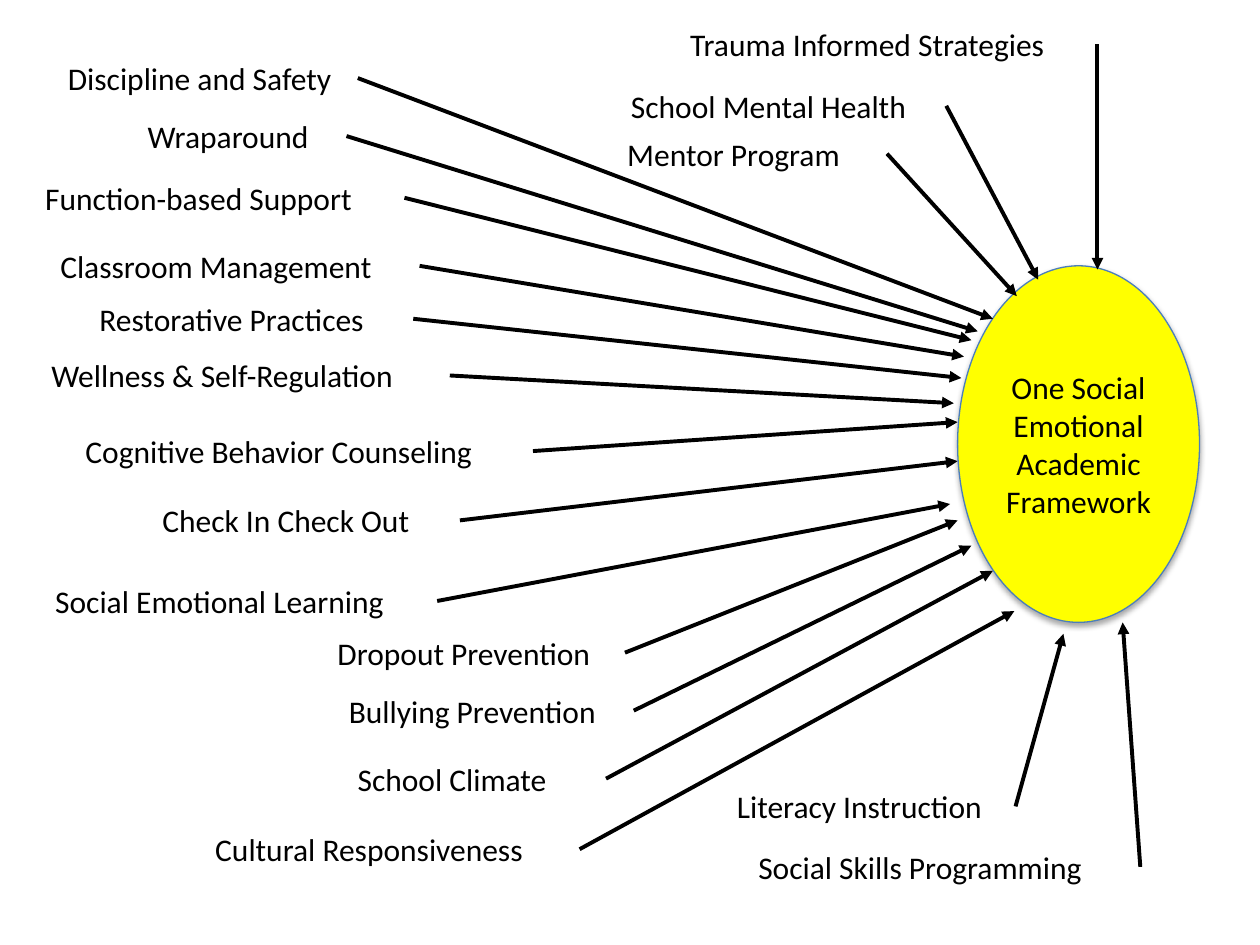
from lxml import etree
from pptx import Presentation
from pptx import util as u
from pptx.dml.color import RGBColor
from pptx.enum import shapes, text
from pptx.oxml import parse_xml
from pptx.oxml.ns import nsdecls, qn

PX = 9144
FONT = "Calibri"
LABEL_HEIGHT = 40
COLORS = {"ink": "000000", "framework": "FFFF00", "outline": "4B7EBC"}
LEFT, CENTER = text.PP_ALIGN.LEFT, text.PP_ALIGN.CENTER

FRAMEWORK_BOX = (760, 211, 192, 283)

LEFT_PRACTICES = [
    ("Discipline and Safety", 7, 0, 251, 28, 42, CENTER),
    ("Wraparound", 61, 46, 188, 16, 52, CENTER),
    ("Function-based Support", 0, 95, 295, 11, 59, LEFT),
    ("Classroom Management", 12, 149, 295, 5, 72, LEFT),
    ("Restorative Practices", 43, 191, 259, 3, 89, LEFT),
    ("Wellness & Self-Regulation", 5, 236, 326, -3, 109, LEFT),
    ("Cognitive Behavior Counseling", 32, 296, 365, 0, 124, LEFT),
    ("Check In Check Out", 93, 351, 246, 0, 155, LEFT),
    ("Social Emotional Learning", 8, 415, 313, -6, 189, LEFT),
    ("Dropout Prevention", 232, 456, 238, 0, 202, LEFT),
    ("Bullying Prevention", 241, 502, 236, 11, 222, LEFT),
    ("School Climate", 248, 556, 207, 28, 242, LEFT),
    ("Cultural Responsiveness", 135, 612, 299, 45, 274, LEFT),
]
TOP_PRACTICES = [
    ("Trauma Informed Strategies", 50, 0, 333, 111, 3, LEFT),
    ("School Mental Health", 3, 49, 260, 64, 11, LEFT),
    ("Mentor Program", 0, 87, 216, 47, 24, LEFT),
]
BOTTOM_PRACTICES = [
    ("Literacy Instruction", 0, 0, 231, 84, 292, LEFT),
    ("Social Skills Programming", 17, 48, 313, 131, 283, LEFT),
]
REGIONS = [
    ((26, 42), LEFT_PRACTICES),
    ((488, 15), TOP_PRACTICES),
    ((575, 620), BOTTOM_PRACTICES),
]


def emu(*lengths):
    return [u.Emu(length * PX) for length in lengths]


def color(name):
    return RGBColor.from_string(COLORS[name])


def write(frame, wording, align):
    frame.word_wrap = True
    frame.text = wording
    paragraph = frame.paragraphs[0]
    paragraph.alignment = align
    font = paragraph.runs[0].font
    font.name, font.size = FONT, u.Pt(18)
    font.color.rgb = color("ink")


def add_framework(slide, box):
    framework = slide.shapes.add_shape(shapes.MSO_SHAPE.OVAL, *emu(*box))
    framework.fill.solid()
    framework.fill.fore_color.rgb = color("framework")
    framework.line.color.rgb = color("outline")
    framework.line.width = u.Pt(0.75)
    framework.shadow.inherit = False
    effects = framework._element.spPr.find(qn("a:effectLst"))
    effects.append(parse_xml(
        f'<a:outerShdw {nsdecls("a")} blurRad="40000" dist="23000" dir="5400000" '
        f'rotWithShape="0"><a:srgbClr val="{COLORS["ink"]}"><a:alpha val="35000"/>'
        '</a:srgbClr></a:outerShdw>'))
    framework.text_frame.vertical_anchor = text.MSO_ANCHOR.MIDDLE
    write(framework.text_frame, "One Social Emotional Academic Framework", CENTER)


def add_arrow(slide, start, tip):
    arrow = slide.shapes.add_connector(
        shapes.MSO_CONNECTOR.STRAIGHT, *emu(*start, *tip))
    arrow.line.color.rgb = color("ink")
    arrow.line.width = u.Pt(2.25)
    etree.SubElement(arrow.line._get_or_add_ln(), qn("a:tailEnd"), type="triangle")
    etree.SubElement(arrow._element.spPr, qn("a:effectLst"))


def add_practices(slide, origin, practices):
    for wording, left, top, width, tip_x, tip_y, align in practices:
        x, y = origin[0] + left, origin[1] + top
        label = slide.shapes.add_textbox(*emu(x, y, width, LABEL_HEIGHT))
        write(label.text_frame, wording, align)
        label.text_frame.auto_size = text.MSO_AUTO_SIZE.SHAPE_TO_FIT_TEXT
        add_arrow(slide, (x + width, y + LABEL_HEIGHT // 2),
                  (FRAMEWORK_BOX[0] + tip_x, FRAMEWORK_BOX[1] + tip_y))


def main():
    deck = Presentation()
    deck.slide_width, deck.slide_height = emu(1000, 750)
    slide = deck.slides.add_slide(deck.slide_layouts[6])
    add_framework(slide, FRAMEWORK_BOX)
    for origin, practices in REGIONS:
        add_practices(slide, origin, practices)
    deck.save("out.pptx")


if __name__ == "__main__":
    main()
